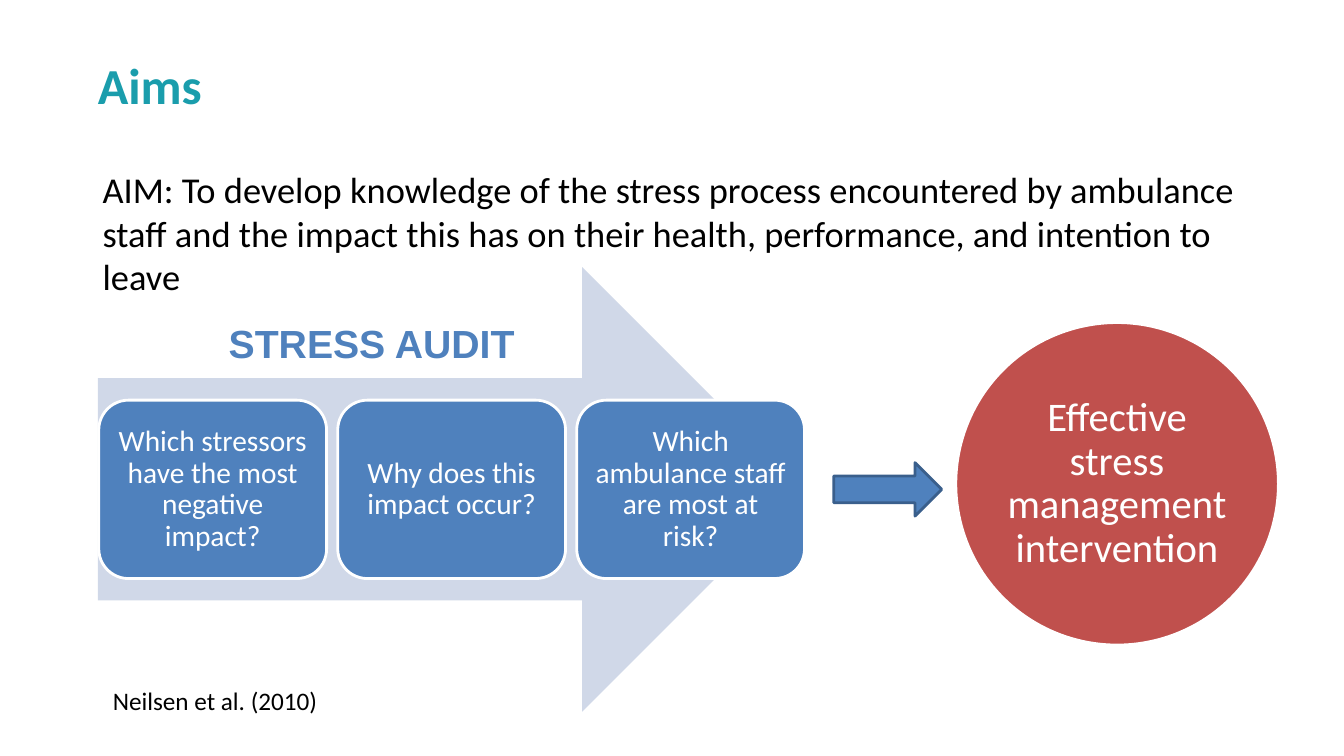
from dataclasses import dataclass

from pptx import Presentation
from pptx.dml.color import RGBColor
from pptx.enum.shapes import MSO_SHAPE as Preset
from pptx.enum.text import MSO_ANCHOR as Anchor, MSO_AUTO_SIZE as AutoSize, PP_ALIGN as Align
from pptx.shapes.autoshape import Shape
from pptx.slide import Slide
from pptx.util import Inches, Pt

TEAL = RGBColor(0x1A, 0x9D, 0xAC)
BLUE = RGBColor(0x4F, 0x81, 0xBD)
DARK_BLUE = RGBColor(0x3A, 0x5F, 0x8C)
PALE_BLUE = RGBColor(0xD0, 0xD8, 0xE8)
RED = RGBColor(0xC0, 0x50, 0x4D)
WHITE = RGBColor(0xFF, 0xFF, 0xFF)
BLACK = RGBColor(0, 0, 0)

Box = tuple[float, float, float, float]


@dataclass
class Figure:
    preset: Preset
    box: Box
    fill: RGBColor
    line: RGBColor | None = None
    text: str = ""
    size: int = 21
    inset: float = 0.09


@dataclass
class Note:
    text: str
    box: Box
    size: int
    color: RGBColor = BLACK
    font: str = "Calibri"
    bold: bool = False
    wrap: bool = True
    auto_size: AutoSize = AutoSize.SHAPE_TO_FIT_TEXT


def write(shape: Shape, text: str, size: int, color: RGBColor, frame_format: dict,
          paragraph_format: dict, font: str = "Calibri", bold: bool = False) -> None:
    frame = shape.text_frame
    frame.text = text
    paragraph = frame.paragraphs[0]
    font_format = {"name": font, "size": Pt(size), "bold": bold}
    for target, values in ((frame, frame_format), (paragraph, paragraph_format),
                           (paragraph.runs[0].font, font_format)):
        for key, value in values.items():
            setattr(target, key, value)
    paragraph.runs[0].font.color.rgb = color


def margins(inset: float) -> dict:
    return {f"margin_{side}": Inches(inset) for side in ("left", "top", "right", "bottom")}


def draw_figure(slide: Slide, figure: Figure) -> None:
    shape = slide.shapes.add_shape(figure.preset, *map(Inches, figure.box))
    shape.shadow.inherit = False
    shape.fill.solid()
    shape.fill.fore_color.rgb = figure.fill
    if figure.line is None:
        shape.line.fill.background()
    else:
        shape.line.color.rgb = figure.line
        shape.line.width = Pt(2)
    if figure.text:
        write(shape, figure.text, figure.size, WHITE,
              {"word_wrap": True, "vertical_anchor": Anchor.MIDDLE, **margins(figure.inset)},
              {"alignment": Align.CENTER, "line_spacing": 0.9})


def draw_note(slide: Slide, note: Note) -> None:
    textbox = slide.shapes.add_textbox(*map(Inches, note.box))
    write(textbox, note.text, note.size, note.color,
          {"word_wrap": note.wrap, "auto_size": note.auto_size}, {}, note.font, note.bold)


def main() -> None:
    prs = Presentation()
    prs.slide_width, prs.slide_height = Inches(13.33), Inches(7.5)
    slide = prs.slides.add_slide(prs.slide_layouts[5])

    # Title
    title = slide.shapes.title
    title.left, title.top, title.width, title.height = map(Inches, (0.97, 0.54, 8.62, 1.11))
    write(title, "Aims", 36, TEAL, {"vertical_anchor": Anchor.TOP, **margins(0)},
          {"alignment": Align.LEFT}, bold=True)

    # Aim statement
    draw_note(slide, Note(
        "AIM: To develop knowledge of the stress process encountered by ambulance staff "
        "and the impact this has on their health, performance, and intention to leave",
        (0.92, 1.61, 11.5, 4.17), 26, auto_size=AutoSize.NONE))

    # Stress audit: three questions on a broad arrow
    draw_figure(slide, Figure(Preset.RIGHT_ARROW, (0.97, 2.65, 7.01, 4.41), PALE_BLUE))
    questions = ("Which stressors have the most negative impact?",
                 "Why does this impact occur?",
                 "Which ambulance staff are most at risk?")
    for index, question in enumerate(questions):
        draw_figure(slide, Figure(Preset.ROUNDED_RECTANGLE, (0.98 + 2.37 * index, 3.97, 2.26, 1.77),
                                  BLUE, WHITE, question))
    draw_note(slide, Note("STRESS AUDIT", (2.17, 3.12, 3.78, 0.57), 28, BLUE, "Arial", bold=True))

    # Resulting intervention
    draw_figure(slide, Figure(Preset.OVAL, (9.48, 3.2, 3.2, 3.2), RED, WHITE,
                              "Effective stress management intervention", 29, 0.04))
    draw_figure(slide, Figure(Preset.RIGHT_ARROW, (8.27, 4.59, 1.07, 0.53), BLUE, DARK_BLUE))

    # Citation
    draw_note(slide, Note("Neilsen et al. (2010)", (1.02, 6.75, 2.32, 0.4), 18, wrap=False))

    prs.save("out.pptx")


if __name__ == "__main__":
    main()
